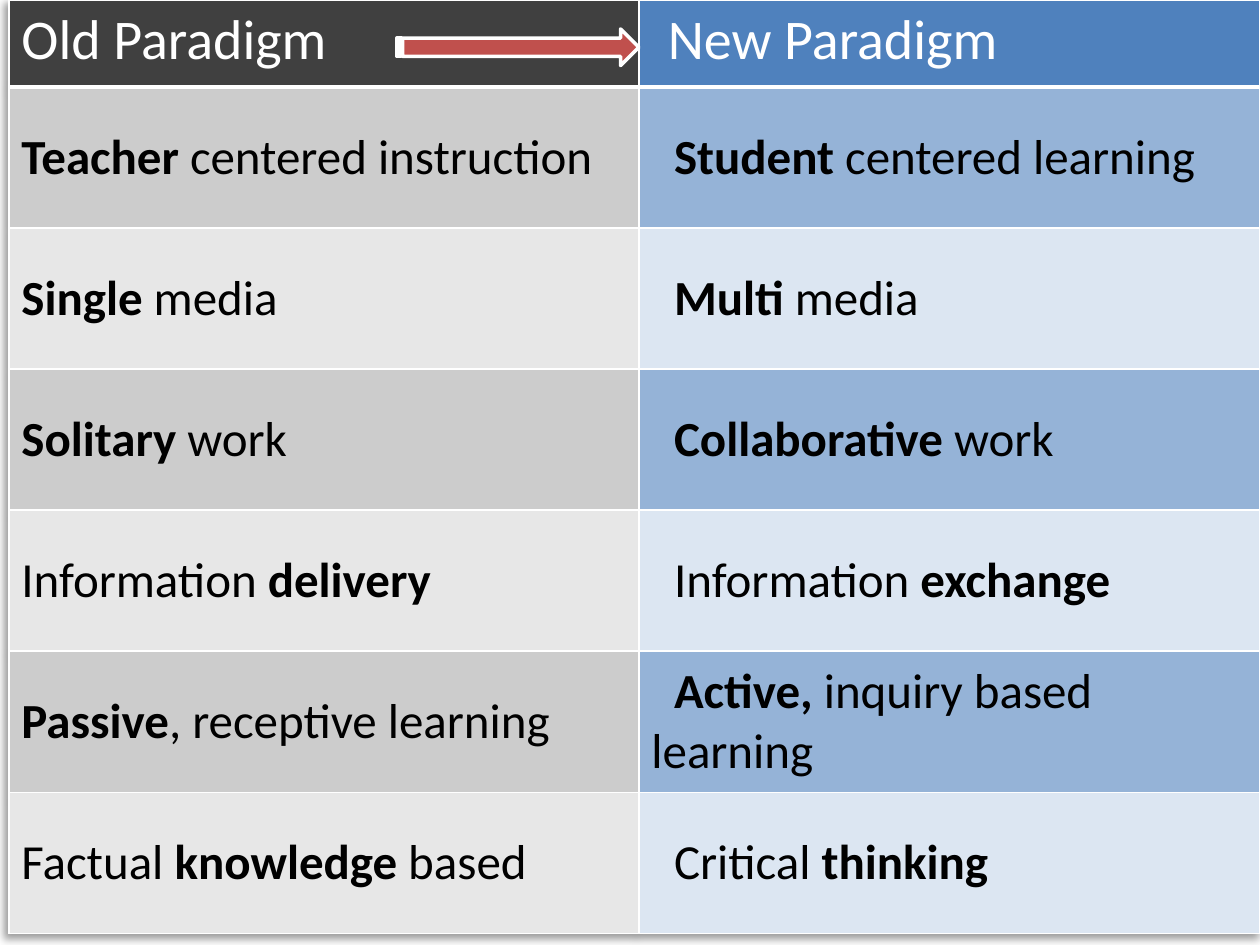
from pptx import Presentation
from pptx.dml.color import RGBColor
from pptx.enum.shapes import MSO_SHAPE
from pptx.enum.text import MSO_ANCHOR
from pptx.oxml import parse_xml
from pptx.oxml.ns import nsdecls
from pptx.util import Inches, Pt


def paint(fill, color):
    fill.solid()
    fill.fore_color.rgb = RGBColor.from_string(color)


def add_run(p, text, color, **fmt):
    r = p.add_run()
    r.text = text
    for name, value in {"name": "Calibri", **fmt}.items():
        setattr(r.font, name, value)
    paint(r.font.fill, color)


prs = Presentation()
prs.slide_width, prs.slide_height = Inches(10), Inches(7.5)
s = prs.slides.add_slide(prs.slide_layouts[6])

rows = [
    ("Old Paradigm", "New Paradigm"),
    ("*Teacher* centered instruction", "*Student* centered learning"),
    ("*Single* media", "*Multi* media"),
    ("*Solitary* work", "*Collaborative* work"),
    ("Information *delivery*", "Information *exchange*"),
    ("*Passive*, receptive learning", "*Active,* inquiry based learning"),
    ("Factual *knowledge* based", "Critical *thinking*"),
]
header_fills = ("404040", "4F81BD")
band_fills = (("E7E7E7", "DCE6F2"), ("CCCCCC", "95B3D7"))

tbl = s.shapes.add_table(len(rows), 2, Inches(0.07), Inches(0), Inches(9.93), Inches(7.39)).table
for col, width in zip(tbl.columns, (5, 4.93)):
    col.width = Inches(width)
for i, row in enumerate(tbl.rows):
    row.height = Inches(1.12 if i else 0.69)

tbl._tbl.tblPr.insert(0, parse_xml(
    f'<a:effectLst {nsdecls("a")}><a:outerShdw blurRad="50800" dist="38100" dir="8100000">'
    '<a:srgbClr val="000000"><a:alpha val="40000"/></a:srgbClr></a:outerShdw></a:effectLst>'))

for i, texts in enumerate(rows):
    for j, text in enumerate(texts):
        cell = tbl.cell(i, j)
        paint(cell.fill, band_fills[i % 2][j] if i else header_fills[j])
        cell.vertical_anchor = MSO_ANCHOR.MIDDLE if i else MSO_ANCHOR.TOP
        tcPr = cell._tc.get_or_add_tcPr()
        for k, side in enumerate("LRTB"):
            weight = 3 if i == 0 and side == "B" else 1
            tcPr.insert(k, parse_xml(
                f'<a:ln{side} {nsdecls("a")} w="{Pt(weight)}"><a:solidFill>'
                f'<a:srgbClr val="FFFFFF"/></a:solidFill></a:ln{side}>'))
        p = cell.text_frame.paragraphs[0]
        if j:
            p._p.get_or_add_pPr().set("indent", str(Inches(0.18 if i else 0.13)))
        for k, part in enumerate(text.split("*")):
            if part:
                add_run(p, part, "000000" if i else "FFFFFF", size=Pt(28 if i else 32), bold=k % 2 == 1)

sp = s.shapes.add_shape(MSO_SHAPE.STRIPED_RIGHT_ARROW, Inches(3.15), Inches(0.23), Inches(1.92), Inches(0.29))
sp.shadow.inherit = False
paint(sp.fill, "C0504D")
paint(sp.line.fill, "FFFFFF")
sp.line.width = Pt(2)

prs.save("out.pptx")
